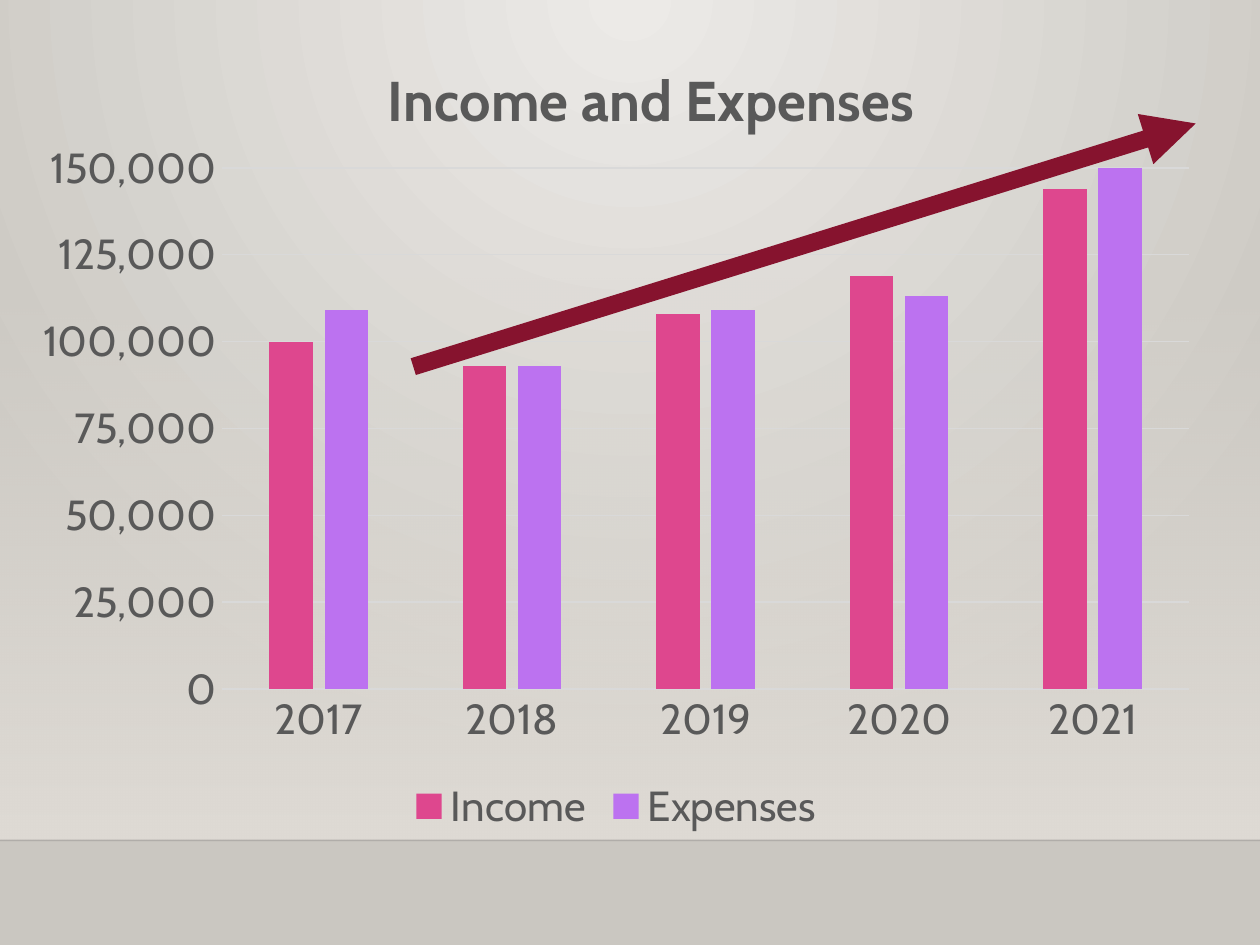
from lxml import etree
from pptx import Presentation
from pptx.chart.data import CategoryChartData
from pptx.dml.color import RGBColor
from pptx.enum import chart as ce, shapes
from pptx.oxml.ns import qn
from pptx.util import Inches, Pt

# Content
TITLE = "Income and Expenses"
YEARS = ["2017", "2018", "2019", "2020", "2021"]
SERIES = [
    ("Income", [100000, 93000, 108000, 119000, 144000], RGBColor(0xDE, 0x47, 0x8E)),
    ("Expenses", [109000, 93000, 109000, 113000, 150000], RGBColor(0xBC, 0x72, 0xF0)),
]
FONT = "Cabin"
GLOW = RGBColor(0xEC, 0xEA, 0xE7)
EDGE = RGBColor(0xCA, 0xC7, 0xC1)
WALL = RGBColor(0xDF, 0xDB, 0xD5)
FLOOR = RGBColor(0, 0, 1)
INK = RGBColor(0x59, 0x59, 0x59)
GRID = RGBColor(0xD9, 0xD9, 0xD9)
TREND = RGBColor(0x86, 0x13, 0x2E)

# Slide geometry
W, H = Inches(10), Inches(7.5)
WALL_TOP, FLOOR_Y = Inches(2.2), Inches(6.67)


def add(parent, tag, **attrs):
    return etree.SubElement(parent, qn(tag), {k: str(v) for k, v in attrs.items()})


def set_alpha(element, percent):
    add(element.find(".//" + qn("a:srgbClr")), "a:alpha", val=percent * 1000)


def set_stops(fill, *colors):
    fill.gradient()
    for stop, color in zip(fill.gradient_stops, colors):
        stop.color.rgb = color


def add_line(s, x1, y1, x2, y2, color, width):
    c = s.shapes.add_connector(shapes.MSO_CONNECTOR.STRAIGHT, x1, y1, x2, y2)
    c.line.color.rgb, c.line.width = color, Pt(width)
    add(c.element.spPr, "a:effectLst")
    return c


def style_font(font, size, bold=False):
    font.name, font.size, font.bold = FONT, Pt(size), bold
    font.color.rgb = INK


def style_line(line, color, width=0.75):
    line.color.rgb, line.width = color, Pt(width)


def place(element, **shares):
    """Fix a chart part's position as shares of the chart's size."""
    layout = element.find(qn("c:layout"))
    if layout is None:
        layout = etree.Element(qn("c:layout"))
        element.insert(0, layout)
    manual = add(layout, "c:manualLayout")
    if "w" in shares:
        add(manual, "c:layoutTarget", val="inner")
    for mode in ("xMode", "yMode"):
        add(manual, "c:" + mode, val="edge")
    for key, share in shares.items():
        add(manual, "c:" + key, val=share)


prs = Presentation()
prs.slide_width, prs.slide_height = W, H
s = prs.slides.add_slide(prs.slide_layouts[6])

# Background: circular glow from the top centre
set_stops(s.background.fill, GLOW, EDGE)
grad = s.element.find(".//" + qn("a:gradFill"))
grad.remove(grad.find(qn("a:lin")))
glow = add(grad, "a:path", path="circle")
add(glow, "a:fillToRect", l=43000, t=0, r=43000, b=100000)

# Wall fading in towards the floor line
sp = s.shapes.add_shape(shapes.MSO_SHAPE.RECTANGLE, 0, WALL_TOP, W, FLOOR_Y - WALL_TOP)
sp.shadow.inherit = False
sp.line.fill.background()
set_stops(sp.fill, WALL, WALL)
sp.fill.gradient_angle = 270
set_alpha(sp.element.spPr, 0)

floor = add_line(s, 0, FLOOR_Y, W, FLOOR_Y, FLOOR, 1)
set_alpha(floor.element.spPr, 20)

# Chart
data = CategoryChartData(number_format="#,##0")
data.categories = YEARS
for name, values, _ in SERIES:
    data.add_series(name, values)
chart = s.shapes.add_chart(ce.XL_CHART_TYPE.COLUMN_CLUSTERED, Inches(0.15), 0,
                           Inches(9.48), FLOOR_Y, data).chart
style_font(chart.font, 24)

chart.has_title = True
tf = chart.chart_title.text_frame
tf.text = TITLE
style_font(tf.paragraphs[0].runs[0].font, 32, bold=True)
place(chart.chart_title._element, x=0.3, y=0.06)
place(chart._chartSpace.chart.plotArea, x=0.17, y=0.2, w=0.81, h=0.62)

chart.has_legend = True
chart.legend.position = ce.XL_LEGEND_POSITION.BOTTOM
chart.legend.include_in_layout = False
style_font(chart.legend.font, 24)

plot = chart.plots[0]
plot.gap_width, plot.overlap, plot.vary_by_categories = 219, -27, False
for series, (_, _, color) in zip(plot.series, SERIES):
    series.format.fill.solid()
    series.format.fill.fore_color.rgb = color

# Axes
cat, val = chart.category_axis, chart.value_axis
for axis in (cat, val):
    axis.major_tick_mark = axis.minor_tick_mark = ce.XL_TICK_MARK.NONE
    style_font(axis.tick_labels.font, 24)
style_line(cat.format.line, GRID)
val.format.line.fill.background()
val.minimum_scale, val.maximum_scale, val.major_unit = 0, 150000, 25000
val.tick_labels.number_format = "#,##0"
val.tick_labels.number_format_is_linked = False
style_line(val.major_gridlines.format.line, GRID)

# Trend arrow
trend = add_line(s, Inches(3.28), Inches(2.91), Inches(9.49), Inches(0.98), TREND, 10)
add(trend.element.spPr.find(qn("a:ln")), "a:tailEnd", type="triangle")

prs.save("out.pptx")
